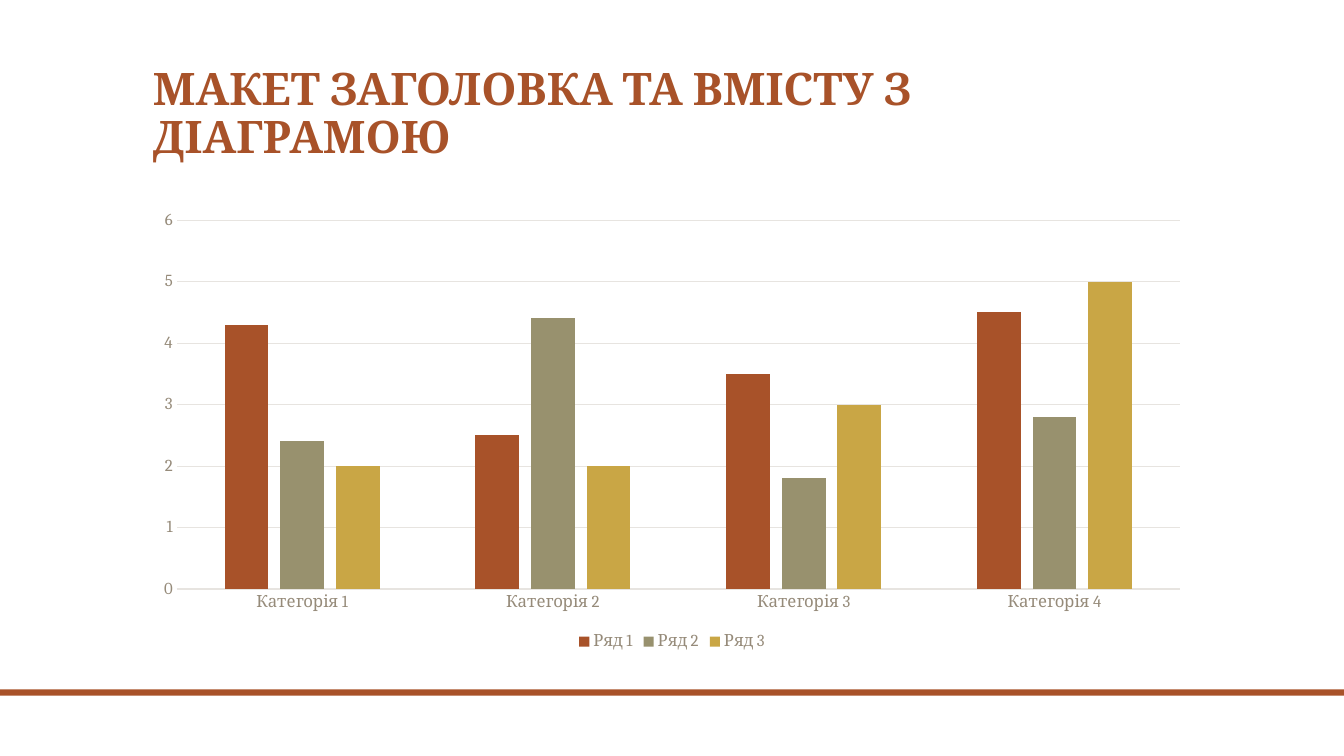
import pptx
import pptx.chart.data
import pptx.dml.color
import pptx.enum.chart
import pptx.enum.shapes
import pptx.enum.text
import pptx.util

Cm = pptx.util.Cm
Pt = pptx.util.Pt

FONT = "Cambria"
RUST, OLIVE, GOLD = "A85229", "98916E", "C9A645"
LABEL, GRID = "968B7A", "E7E4E0"

CATEGORIES = ["Категорія 1", "Категорія 2", "Категорія 3", "Категорія 4"]
SERIES = [
    ("Ряд 1", (4.3, 2.5, 3.5, 4.5), RUST),
    ("Ряд 2", (2.4, 4.4, 1.8, 2.8), OLIVE),
    ("Ряд 3", (2, 2, 3, 5), GOLD),
]


def rgb(value):
    return pptx.dml.color.RGBColor.from_string(value)


def paint(fill, color):
    fill.solid()
    fill.fore_color.rgb = rgb(color)


def style_font(font, size, color, bold=False):
    font.name = FONT
    font.size = Pt(size)
    font.bold = bold
    font.color.rgb = rgb(color)


def style_line(line, color, width=0.75):
    line.color.rgb = rgb(color)
    line.width = Pt(width)


def write_text(tf, text, size=12, color=LABEL, bold=False, spacing=1.0):
    p = tf.paragraphs[0]
    p.alignment = pptx.enum.text.PP_ALIGN.LEFT
    p.line_spacing = spacing
    r = p.add_run()
    r.text = text
    style_font(r.font, size, color, bold)


def add_title(s, text, left, top, width, height):
    sp = s.shapes.title
    sp.left, sp.top, sp.width, sp.height = left, top, width, height
    tf = sp.text_frame
    tf.word_wrap = True
    tf.auto_size = pptx.enum.text.MSO_AUTO_SIZE.NONE
    tf.vertical_anchor = pptx.enum.text.MSO_ANCHOR.BOTTOM
    write_text(tf, text, size=32, color=RUST, bold=True, spacing=0.9)


def add_footer_bar(s, left, top, width, height):
    sp = s.shapes.add_shape(
        pptx.enum.shapes.MSO_SHAPE.RECTANGLE, left, top, width, height)
    sp.shadow.inherit = False
    paint(sp.fill, RUST)
    sp.line.fill.background()


def style_axis(axis):
    axis.major_tick_mark = pptx.enum.chart.XL_TICK_MARK.NONE
    axis.minor_tick_mark = pptx.enum.chart.XL_TICK_MARK.NONE
    style_font(axis.tick_labels.font, 12, LABEL)


def add_column_chart(s, left, top, width, height):
    data = pptx.chart.data.CategoryChartData()
    data.categories = CATEGORIES
    for name, values, _ in SERIES:
        data.add_series(name, values)
    chart = s.shapes.add_chart(
        pptx.enum.chart.XL_CHART_TYPE.COLUMN_CLUSTERED,
        left, top, width, height, data).chart
    style_font(chart.font, 10, "514A40")
    chart.has_title = False

    plot = chart.plots[0]
    plot.gap_width = 219
    plot.overlap = -27
    plot.vary_by_categories = False
    for series, (_, _, color) in zip(plot.series, SERIES):
        paint(series.format.fill, color)

    style_axis(chart.category_axis)
    style_line(chart.category_axis.format.line, GRID)

    values = chart.value_axis
    style_axis(values)
    values.minimum_scale, values.maximum_scale, values.major_unit = 0, 6, 1
    values.format.line.fill.background()
    values.has_major_gridlines = True
    style_line(values.major_gridlines.format.line, GRID)

    chart.has_legend = True
    chart.legend.position = pptx.enum.chart.XL_LEGEND_POSITION.BOTTOM
    chart.legend.include_in_layout = False
    style_font(chart.legend.font, 12, LABEL)


def main():
    prs = pptx.Presentation()
    prs.slide_width, prs.slide_height = Cm(33.87), Cm(19.05)
    s = prs.slides.add_slide(prs.slide_layouts[5])
    left, width = Cm(3.6), Cm(26.67)
    add_footer_bar(s, 0, Cm(17.37), prs.slide_width, Cm(0.16))
    add_title(s, "МАКЕТ ЗАГОЛОВКА ТА ВМІСТУ З ДІАГРАМОЮ",
              left, Cm(1.07), width, Cm(3.18))
    add_column_chart(s, left, Cm(5.08), width, Cm(11.43))
    prs.save("out.pptx")


if __name__ == "__main__":
    main()
